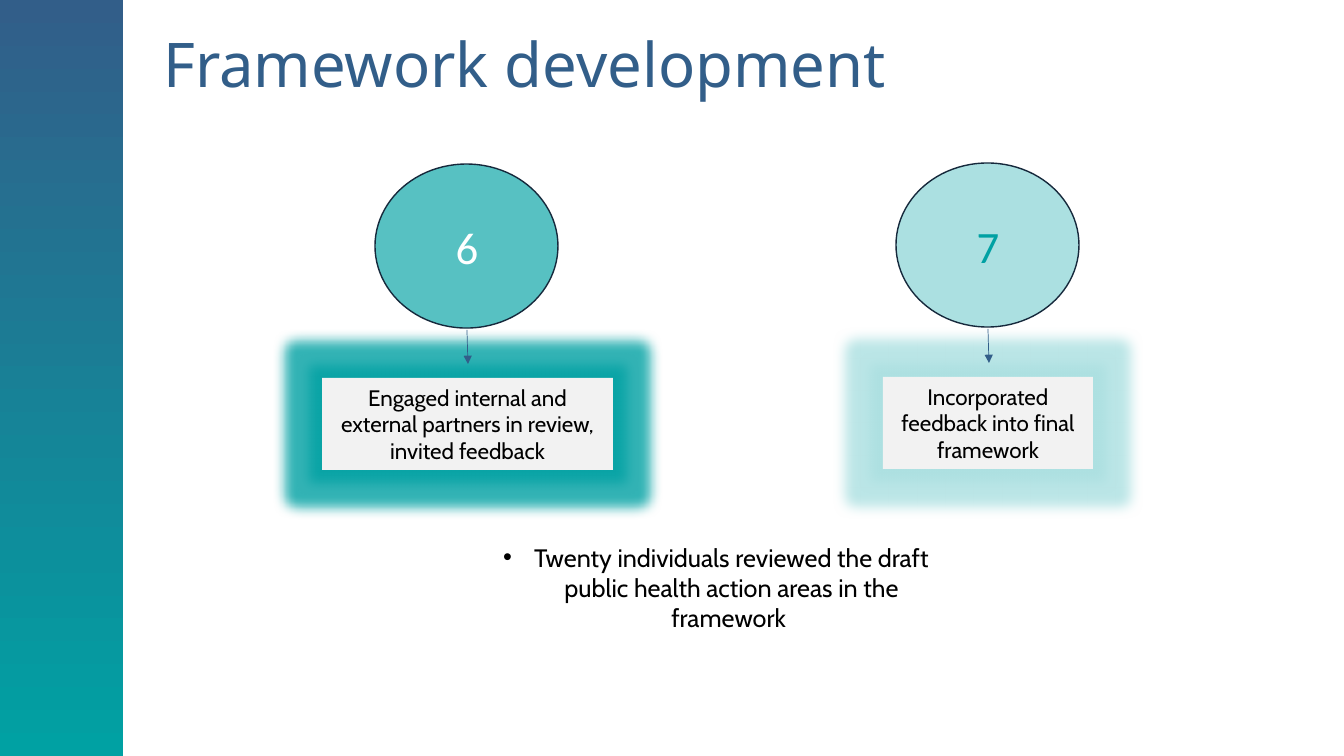
from lxml import etree
from pptx import Presentation
from pptx.dml.color import RGBColor
from pptx.enum.shapes import MSO_CONNECTOR as Connector, MSO_SHAPE as Shape
from pptx.enum.text import MSO_ANCHOR as Anchor, PP_ALIGN as Align
from pptx.oxml.ns import qn
from pptx.util import Pt

EMU_PER_PX = 914400 / 100.8
COLORS = {
    "navy": "325E89",
    "teal": "00A1A3",
    "mid_teal": "57C1C2",
    "pale_teal": "ABE0E1",
    "outline": "16293C",
    "panel": "F2F2F2",
    "text": "000000",
    "white": "FFFFFF",
}


def px(*lengths):
    return [round(length * EMU_PER_PX) for length in lengths]


def rgb(name):
    return RGBColor.from_string(COLORS[name])


def add_child(parent, tag, **attributes):
    return etree.SubElement(parent, qn(tag), attributes)


def format_text(text_frame, text, font_name, size, color, align=Align.CENTER):
    text_frame.word_wrap = True
    text_frame.text = text
    paragraph = text_frame.paragraphs[0]
    paragraph.alignment = align
    font = paragraph.runs[0].font
    font.name = font_name
    font.size = Pt(size)
    font.color.rgb = rgb(color)
    return paragraph


def add_text(slide, box, text, font_name, size, color):
    text_box = slide.shapes.add_textbox(*px(*box))
    return format_text(text_box.text_frame, text, font_name, size, color)


def add_filled_shape(slide, kind, box, fill):
    shape = slide.shapes.add_shape(kind, *px(*box))
    shape.shadow.inherit = False
    shape.fill.solid()
    shape.fill.fore_color.rgb = rgb(fill)
    shape.line.fill.background()
    return shape


def add_glow(shape, color, opacity):
    effects = shape.element.spPr.find(qn("a:effectLst"))
    glow = add_child(effects, "a:glow", rad=str(Pt(18)))
    glow_color = add_child(glow, "a:srgbClr", val=COLORS[color])
    add_child(glow_color, "a:alpha", val=str(opacity * 1000))


def add_arrow(slide, start_x, start_y, end_x, end_y):
    arrow = slide.shapes.add_connector(
        Connector.STRAIGHT, *px(start_x, start_y, end_x, end_y))
    arrow.line.color.rgb = rgb("navy")
    arrow.line.width = Pt(0.5)
    add_child(arrow.line._get_or_add_ln(), "a:tailEnd", type="triangle")
    add_child(arrow.element.spPr, "a:effectLst")


def add_side_band(slide):
    band = add_filled_shape(slide, Shape.RECTANGLE, (0, 0, 123, 756), "navy")
    band.fill.gradient()
    band.fill.gradient_angle = 270
    for stop, color, position in zip(
            band.fill.gradient_stops, ("navy", "teal"), (0, 1)):
        stop.color.rgb = rgb(color)
        stop.position = position


def add_title(slide, text):
    title = slide.shapes.title
    title.left, title.top, title.width, title.height = px(153, 40, 920, 56)
    title.text_frame.vertical_anchor = Anchor.MIDDLE
    paragraph = format_text(
        title.text_frame, text, "Noto Sans", 44, "navy", Align.LEFT)
    paragraph.line_spacing = 0.9


def add_step(slide, number, center_x, top, circle_fill, number_color,
             panel_width, glow, opacity, text):
    """Numbered circle with an arrow down to a glowing panel."""
    circle = add_filled_shape(slide, Shape.FLOWCHART_CONNECTOR,
                              (center_x - 92, top, 183, 164), circle_fill)
    circle.line.color.rgb = rgb("outline")
    circle.line.width = Pt(1)
    panel = add_filled_shape(
        slide, Shape.RECTANGLE,
        (center_x - panel_width // 2, top + 214, panel_width, 92), "panel")
    add_glow(panel, glow, opacity)
    format_text(panel.text_frame, text, "Cabin", 16, "text")
    add_text(slide, (center_x - 44, top + 51, 88, 65),
             number, "Calibri", 32, number_color)
    add_arrow(slide, center_x, top + 166, center_x + 1, top + 200)


def add_bullet_note(slide, text):
    paragraph = add_text(slide, (488, 537, 456, 102), text, "Cabin", 18, "text")
    indent = px(31)[0]
    properties = paragraph._p.get_or_add_pPr()
    properties.set("marL", str(indent))
    properties.set("indent", str(-indent))
    add_child(properties, "a:buFont", typeface="Arial")
    add_child(properties, "a:buChar", char="•")


def main():
    presentation = Presentation()
    presentation.slide_width, presentation.slide_height = px(1344, 756)
    slide = presentation.slides.add_slide(presentation.slide_layouts[5])
    add_side_band(slide)
    add_title(slide, "Framework development")
    add_step(slide, "6", 467, 164, "mid_teal", "white", 291, "teal", 80,
             "Engaged internal and external partners in review, invited feedback")
    add_step(slide, "7", 988, 163, "pale_teal", "teal", 210, "pale_teal", 80,
             "Incorporated feedback into final framework")
    add_bullet_note(slide, "Twenty individuals reviewed the draft public health "
                           "action areas in the framework ")
    presentation.save("out.pptx")


if __name__ == "__main__":
    main()
